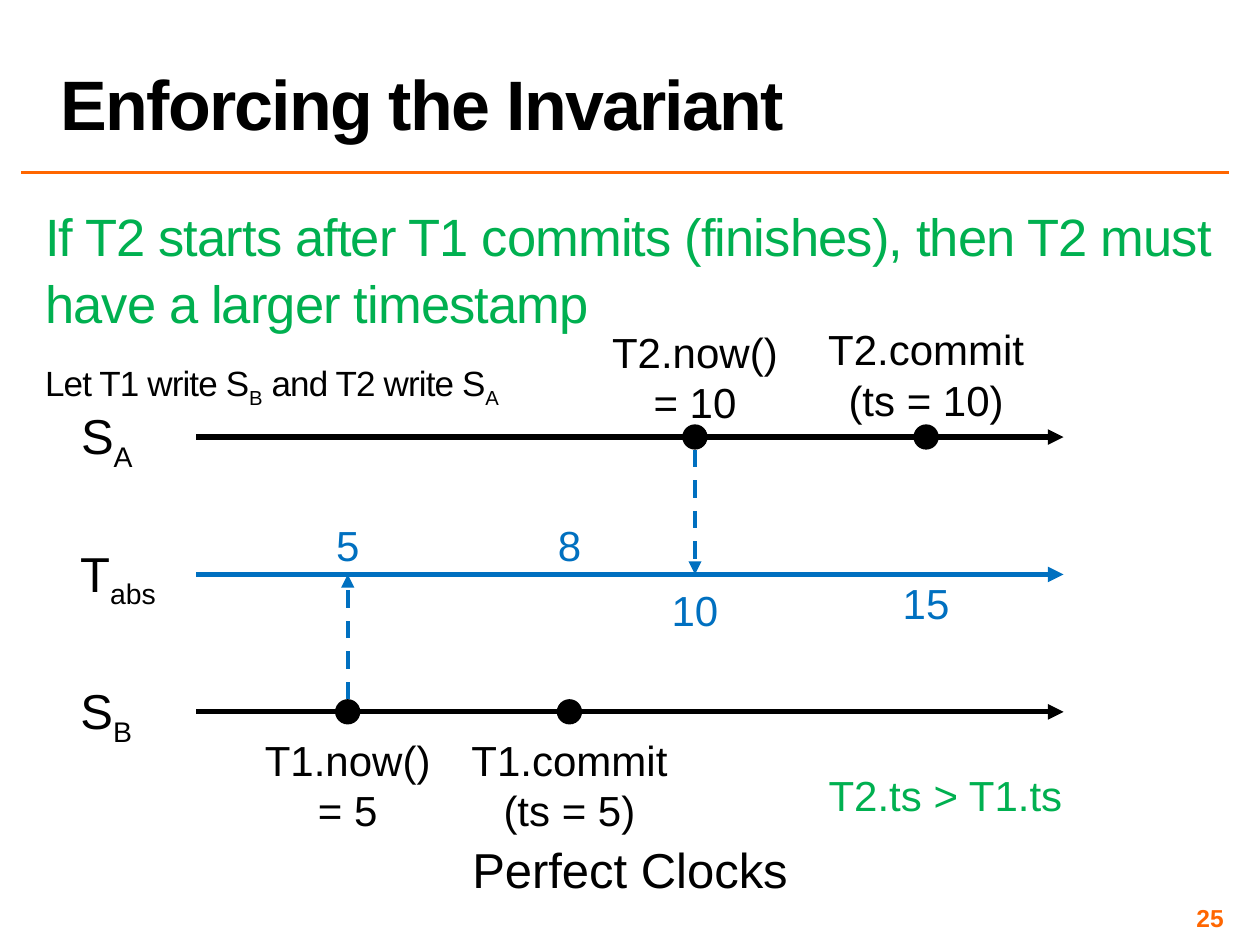
import pptx
import pptx.util
import pptx.dml.color
import pptx.enum.dml
import pptx.enum.shapes
import pptx.enum.text
from dataclasses import dataclass
from lxml import etree
from pptx.oxml.ns import qn

Cm = pptx.util.Cm
Pt = pptx.util.Pt
Align = pptx.enum.text.PP_ALIGN
Anchor = pptx.enum.text.MSO_ANCHOR


@dataclass(frozen=True)
class Theme:
    face: str = "Arial"
    black: str = "000000"
    blue: str = "0070C0"
    green: str = "00B050"
    orange: str = "FF6600"
    title: int = 40
    lead: int = 30
    label: int = 28
    event: int = 24
    note: int = 20
    page: int = 14


THEME = Theme()
START, END = 3.96, 21.44
TOP, STEP = 8.81, 2.77
ROWS = [TOP + STEP * row for row in range(3)]
DOT = 0.51


def color(code):
    return pptx.dml.color.RGBColor.from_string(code)


def fill_para(para, text, size, code, align=Align.CENTER, bold=False, track=0):
    para.alignment = align
    font = para.font
    font.name, font.size, font.bold = THEME.face, Pt(size), bold
    font.color.rgb = color(code)
    for index, part in enumerate(text.split("_")):
        if not part:
            continue
        run = para.add_run()
        run.text = part
        props = run._r.get_or_add_rPr()
        if index % 2:
            props.set("baseline", "-25000")
        if track:
            props.set("spc", str(int(track * 100)))


def add_text(slide, box, lines, size, code, **style):
    frame = slide.shapes.add_textbox(*map(Cm, box)).text_frame
    frame.word_wrap = False
    for index, line in enumerate(lines):
        para = frame.add_paragraph() if index else frame.paragraphs[0]
        fill_para(para, line, size, code, **style)
    return frame


def add_line(slide, start, end, code, width, arrow=True, dash=False):
    kind = pptx.enum.shapes.MSO_CONNECTOR.STRAIGHT
    link = slide.shapes.add_connector(kind, *map(Cm, start + end))
    link.line.color.rgb = color(code)
    link.line.width = Pt(width)
    if dash:
        link.line.dash_style = pptx.enum.dml.MSO_LINE.DASH
    if arrow:
        tip = etree.SubElement(link.line._get_or_add_ln(), qn("a:tailEnd"))
        tip.set("type", "triangle")
    etree.SubElement(link._element.spPr, qn("a:effectLst"))


def add_dot(slide, x, y):
    kind = pptx.enum.shapes.MSO_SHAPE.OVAL
    box = (x - DOT / 2, y - DOT / 2, DOT, DOT)
    dot = slide.shapes.add_shape(kind, *map(Cm, box))
    dot.shadow.inherit = False
    dot.fill.solid()
    dot.fill.fore_color.rgb = color(THEME.black)
    dot.line.fill.background()


def set_inset(frame):
    frame.margin_left = frame.margin_right = Cm(0.1)
    frame.margin_top = frame.margin_bottom = Cm(0.1)
    frame.word_wrap = True


def add_title(slide):
    title = slide.shapes.title
    title.left, title.top, title.width, title.height = map(Cm, (0.97, 0.05, 23.8, 2.97))
    frame = title.text_frame
    frame.auto_size = pptx.enum.text.MSO_AUTO_SIZE.NONE
    frame.vertical_anchor = Anchor.BOTTOM
    para = frame.paragraphs[0]
    fill_para(para, "Enforcing the Invariant", THEME.title, THEME.black,
              Align.LEFT, bold=True, track=-1)
    para.line_spacing = 0.8


def add_body(slide):
    lead = "If T2 starts after T1 commits (finishes), then T2 must have a larger timestamp"
    frame = add_text(slide, (0.81, 3.96, 23.88, 13.18), [lead], THEME.lead,
                     THEME.green, align=Align.LEFT, track=-0.5)
    set_inset(frame)
    frame.paragraphs[0].line_spacing = 1.05
    note = frame.add_paragraph()
    fill_para(note, "Let T1 write S_B_ and T2 write S_A", THEME.note,
              THEME.black, Align.LEFT, track=-0.5)
    frame.paragraphs[0].space_after = note.space_before = Pt(8)


def add_event(slide, x, row, top, width, lines, tick, mark):
    add_dot(slide, x, ROWS[row])
    add_text(slide, (x - width / 2, top, width, 2.31), lines, THEME.event, THEME.black)
    span = 0.51 + 0.48 * len(tick)
    add_text(slide, (x - span / 2, mark, span, 1.27), [tick], THEME.event, THEME.blue)


def main():
    deck = pptx.Presentation()
    deck.slide_width, deck.slide_height = Cm(25.4), Cm(19.05)
    slide = deck.slides.add_slide(deck.slide_layouts[5])
    add_title(slide)
    add_line(slide, (0.43, 3.48), (24.77, 3.48), THEME.orange, 2, arrow=False)
    add_body(slide)

    rows = [("S_A", 1.63, THEME.black), ("T_abs", 2.08, THEME.blue), ("S_B", 1.6, THEME.black)]
    for y, (name, width, code) in zip(ROWS, rows):
        add_line(slide, (START, y), (END, y), code, 3)
        add_text(slide, (1.34, y - 0.75, width, 1.45), [name], THEME.label, THEME.black)

    events = [
        (7.01, 2, 14.68, 3.89, ["T1.now()", "= 5"], "5", 10.34),
        (11.48, 2, 14.68, 4.57, ["T1.commit", "(ts = 5)"], "8", 10.34),
        (14.01, 0, 6.45, 3.89, ["T2.now()", "= 10"], "10", 11.66),
        (18.67, 0, 6.4, 4.57, ["T2.commit", "(ts = 10)"], "15", 11.51),
    ]
    for event in events:
        add_event(slide, *event)
    for x, y in ((7.01, ROWS[2] - DOT / 2), (14.01, ROWS[0] + DOT / 2)):
        add_line(slide, (x, y), (x, ROWS[1]), THEME.blue, 2.5, dash=True)

    add_text(slide, (16.43, 15.39, 5.26, 1.27), ["T2.ts > T1.ts"], THEME.event, THEME.green)
    add_text(slide, (9.17, 16.79, 7.06, 1.45), ["Perfect Clocks"], THEME.label, THEME.black)
    page = add_text(slide, (18.85, 18.21, 5.92, 0.58), ["25"], THEME.page,
                    THEME.orange, align=Align.RIGHT, bold=True)
    set_inset(page)
    page.vertical_anchor = Anchor.MIDDLE
    deck.save("out.pptx")


if __name__ == "__main__":
    main()
